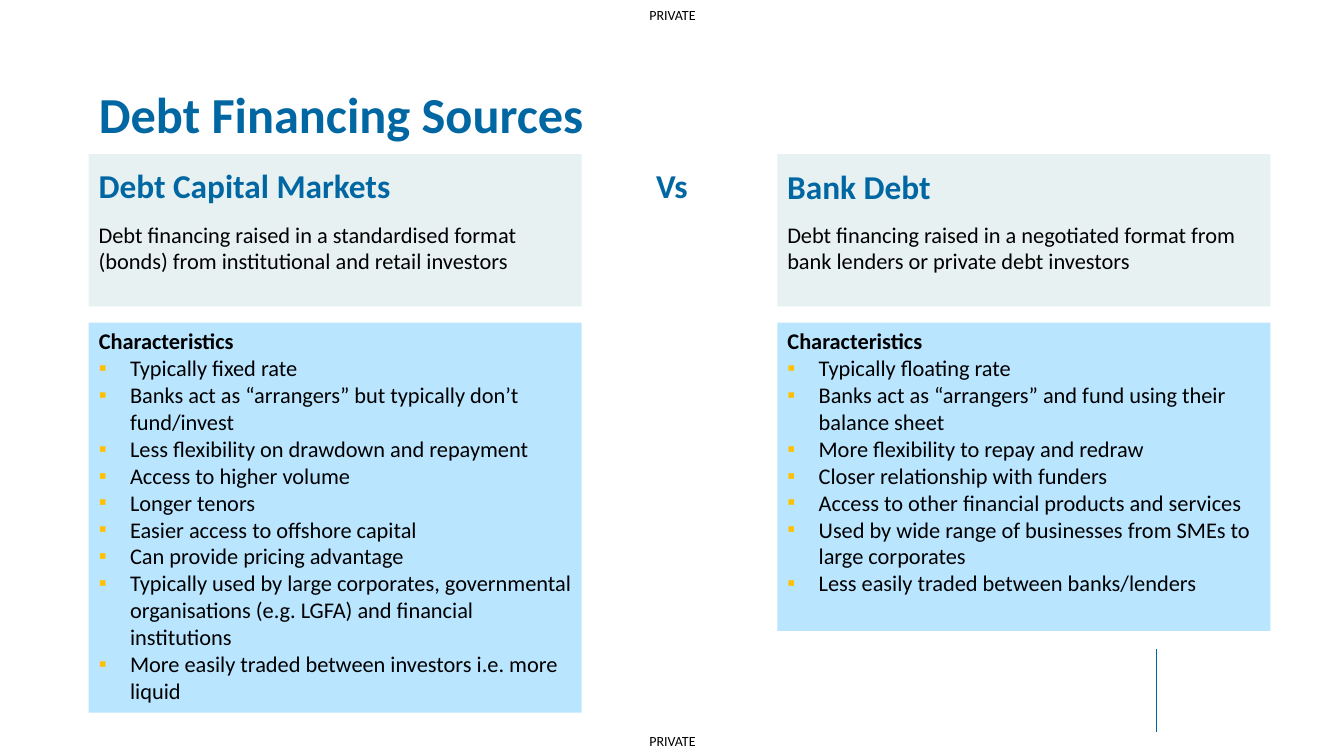
from lxml import etree
from pptx import Presentation
from pptx.dml.color import RGBColor
from pptx.enum.shapes import MSO_CONNECTOR, MSO_SHAPE
from pptx.enum.text import MSO_ANCHOR, MSO_AUTO_SIZE, PP_ALIGN
from pptx.oxml.ns import qn
from pptx.util import Pt

LEFT, MID = PP_ALIGN.LEFT, PP_ALIGN.CENTER
TOP, MIDDLE = MSO_ANCHOR.TOP, MSO_ANCHOR.MIDDLE
FIXED = MSO_AUTO_SIZE.NONE
RECT, LINE = MSO_SHAPE.RECTANGLE, MSO_CONNECTOR.STRAIGHT
BLUE, BLACK, GOLD = "0067A3", "000000", "FFC000"
PALE, SKY = "E7F1F2", "BAE5FF"
SCALE = 9144  # 100 px to the inch

COLS = [
    (88, "Debt Capital Markets", 170,
     "Debt financing raised in a standardised format (bonds) from "
     "institutional and retail investors", 387,
     ["Typically fixed rate",
      "Banks act as “arrangers” but typically don’t fund/invest",
      "Less flexibility on drawdown and repayment",
      "Access to higher volume",
      "Longer tenors",
      "Easier access to offshore capital",
      "Can provide pricing advantage",
      "Typically used by large corporates, governmental organisations "
      "(e.g. LGFA) and financial institutions",
      "More easily traded between investors i.e. more liquid"]),
    (771, "Bank Debt", 171,
     "Debt financing raised in a negotiated format from bank lenders or "
     "private debt investors", 306,
     ["Typically floating rate",
      "Banks act as “arrangers” and fund using their balance sheet",
      "More flexibility to repay and redraw",
      "Closer relationship with funders",
      "Access to other financial products and services",
      "Used by wide range of businesses from SMEs to large corporates",
      "Less easily traded between banks/lenders"]),
]
WIDE = 489


def px(*nums):
    return [n * SCALE for n in nums]


def tint(code):
    return RGBColor.from_string(code)


class Board:
    def __init__(self, slide, face):
        self.slide, self.face = slide, face

    def put(self, para, text, size=16, color=BLACK, bold=False,
            align=LEFT, lead=1.0):
        """Set a paragraph's text and format."""
        para.alignment, para.line_spacing = align, lead
        para.space_before = Pt(0)
        run = para.add_run()
        run.text = text
        font = run.font
        font.name, font.size, font.bold = self.face, Pt(size), bold
        font.color.rgb = tint(color)

    def frame(self, shape, pads=(10, 5, 10, 5), anchor=TOP):
        """Prepare a shape's text area and return it."""
        body = shape.text_frame
        body.word_wrap, body.auto_size = True, FIXED
        body.vertical_anchor = anchor
        (body.margin_left, body.margin_top,
         body.margin_right, body.margin_bottom) = px(*pads)
        return body

    def place(self, index, box):
        """Move a placeholder of the layout to a box."""
        shape = self.slide.placeholders[index]
        shape.left, shape.top, shape.width, shape.height = px(*box)
        return shape

    def title(self, box, text, **style):
        body = self.frame(self.place(0, box))
        self.put(body.paragraphs[0], text, **style)

    def label(self, box, text, pads=(10, 5, 10, 5), anchor=TOP, **style):
        shape = self.slide.shapes.add_textbox(*px(*box))
        body = self.frame(shape, pads, anchor)
        self.put(body.paragraphs[0], text, **style)

    def panel(self, box, text, fill, pads):
        shape = self.slide.shapes.add_shape(RECT, *px(*box))
        shape.shadow.inherit = False
        shape.fill.solid()
        shape.fill.fore_color.rgb = tint(fill)
        shape.line.fill.background()
        self.put(self.frame(shape, pads).paragraphs[0], text)

    def bullet(self, para, mark):
        """Give a paragraph a hanging mark, or none."""
        props = para._p.get_or_add_pPr()
        hang = px(31)[0] if mark else 0
        props.set("marL", str(hang))
        props.set("indent", str(-hang))
        if not mark:
            etree.SubElement(props, qn("a:buNone"))
            return
        color = etree.SubElement(props, qn("a:buClr"))
        etree.SubElement(color, qn("a:srgbClr"), val=GOLD)
        etree.SubElement(props, qn("a:buChar"), char=mark)

    def list(self, index, box, head, items, fill):
        shape = self.place(index, box)
        shape.fill.solid()
        shape.fill.fore_color.rgb = tint(fill)
        body = self.frame(shape)
        self.put(body.paragraphs[0], head, bold=True)
        self.bullet(body.paragraphs[0], None)
        for item in items:
            para = body.add_paragraph()
            self.put(para, item)
            self.bullet(para, "▪")

    def rule(self, ends, color, width):
        line = self.slide.shapes.add_connector(LINE, *px(*ends))
        line.line.color.rgb = tint(color)
        line.line.width = Pt(width)
        etree.SubElement(line._element.spPr, qn("a:effectLst"))


def main():
    deck = Presentation()
    deck.slide_width, deck.slide_height = px(1333, 750)
    board = Board(deck.slides.add_slide(deck.slide_layouts[3]), "Calibri")

    for top in (721, 0):
        board.label((628, top, 78, 29), "PRIVATE", pads=(0, 0, 0, 0),
                    anchor=MIDDLE, size=10, align=MID)
    board.rule((1147, 644, 1147, 726), BLUE, 0.5)
    board.title((88, 84, 1181, 62), "Debt Financing Sources",
                size=36, color=BLUE, bold=True, lead=0.9)

    head = dict(size=23.8, color=BLUE, bold=True, lead=0.7)
    for index, (left, name, top, text, high, items) in enumerate(COLS, 1):
        board.panel((left, 153, WIDE, 151), text, PALE, (10, 66, 10, 5))
        board.label((left, top, 373, 39), name, **head)
        board.list(index, (left, 320, WIDE, high), "Characteristics",
                   items, SKY)
    board.label((641, 170, 75, 39), "Vs", **head)
    deck.save("out.pptx")


if __name__ == "__main__":
    main()
